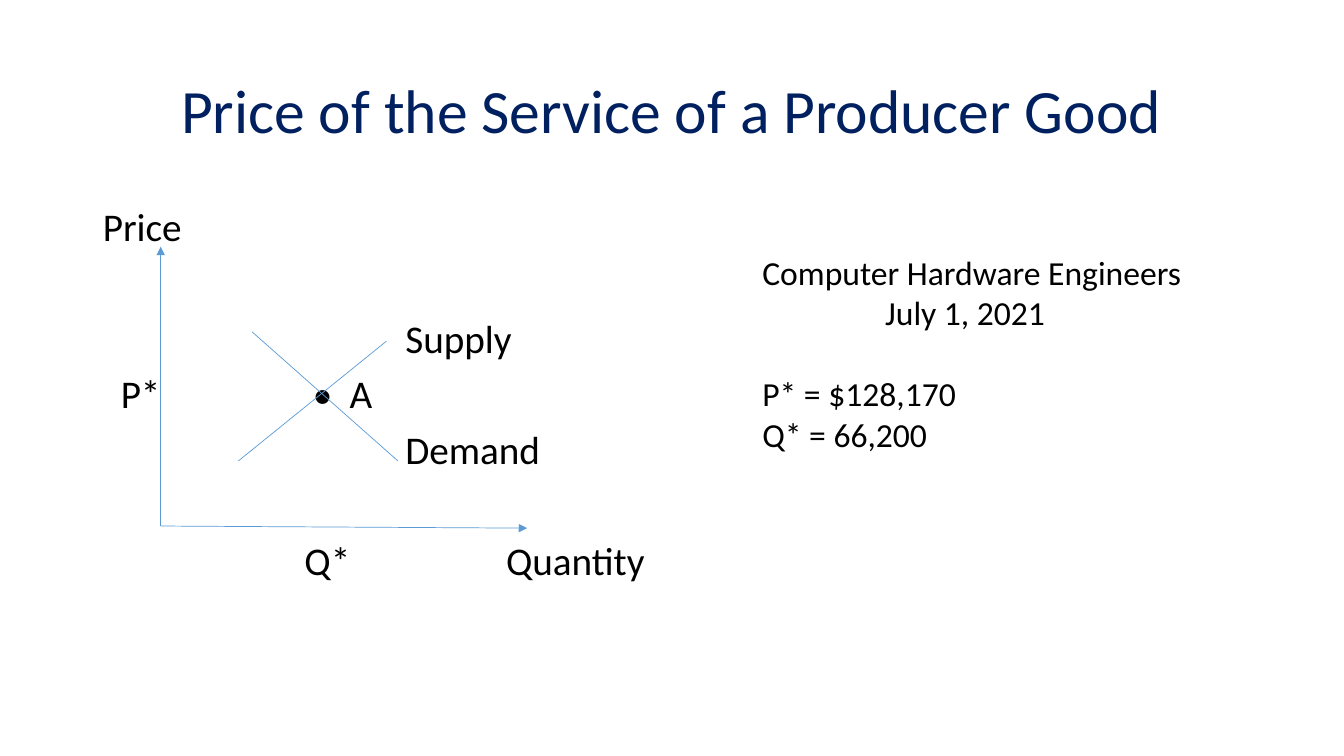
from pptx import Presentation
from pptx.dml.color import RGBColor
from pptx.enum.shapes import MSO_CONNECTOR as Connector
from pptx.enum.text import MSO_ANCHOR as Anchor, PP_ALIGN as Align
from pptx.oxml.ns import qn
from pptx.util import Pt
from lxml.etree import SubElement

PX = 9525  # EMU in one px, 96 px to the inch
COLORS = {"title": "002060", "text": "000000", "line": "5B9BD5"}
FONT = "Calibri"


class MarketSlide:
    def __init__(self, deck):
        self.page = deck.slides.add_slide(deck.slide_layouts[5])

    def style(self, para, size, color):
        for span in para.runs:
            span.font.name = FONT
            span.font.size = Pt(size)
            span.font.color.rgb = RGBColor.from_string(COLORS[color])

    def title(self, text, left, top, width, height):
        box = self.page.shapes.title
        box.left, box.top = left * PX, top * PX
        box.width, box.height = width * PX, height * PX
        frame = box.text_frame
        frame.text = text
        frame.word_wrap = True
        frame.vertical_anchor = Anchor.MIDDLE
        para = frame.paragraphs[0]
        para.alignment = Align.CENTER
        para.line_spacing = 0.9
        self.style(para, 44, "title")

    def text(self, text, left, top, width, height, size):
        box = self.page.shapes.add_textbox(left * PX, top * PX, width * PX, height * PX)
        frame = box.text_frame
        frame.word_wrap = True
        frame.margin_left = frame.margin_right = 0
        frame.margin_top = frame.margin_bottom = 0
        frame.text = text
        for para in frame.paragraphs:
            para.alignment = Align.LEFT
            self.style(para, size, "text")
        return frame.paragraphs

    def line(self, start_x, start_y, end_x, end_y, arrow=False):
        line = self.page.shapes.add_connector(
            Connector.STRAIGHT, start_x * PX, start_y * PX, end_x * PX, end_y * PX)
        line.line.color.rgb = RGBColor.from_string(COLORS["line"])
        line.line.width = Pt(0.5)
        if arrow:
            SubElement(line.line._get_or_add_ln(), qn("a:tailEnd"), type="triangle")
        SubElement(line._element.spPr, qn("a:effectLst"))


def main():
    deck = Presentation()
    deck.slide_width, deck.slide_height = 1280 * PX, 720 * PX
    slide = MarketSlide(deck)
    slide.title("Price of the Service of a Producer Good", 88, 39, 1104, 139)

    # Graph labels: text, left edge, row
    first_row, row_step = 193, 53
    labels = [
        ("Price", 98, 0), ("Supply", 386, 2),
        ("P*", 115, 3), ("•", 298, 3), ("A", 333, 3),
        ("Demand", 386, 4), ("Q*", 290, 6), ("Quantity", 482, 6),
    ]
    for label, left, row in labels:
        slide.text(label, left, first_row + row * row_step, 20 + 24 * len(label), 46, 28)

    # Price and quantity axes
    origin_x, origin_y = 153, 501
    slide.line(origin_x, origin_y, origin_x, 235, arrow=True)
    slide.line(origin_x, origin_y, 502, 503, arrow=True)

    # Supply and demand curves
    slide.line(227, 439, 368, 325)
    slide.line(240, 316, 379, 439)

    # Equilibrium figures
    heading, date, price, quantity = slide.text(
        "Computer Hardware Engineers\nJuly 1, 2021\nP* = $128,170\nQ* = 66,200",
        726, 240, 422, 194, 24)
    date._p.get_or_add_pPr().set("marL", str(117 * PX))
    price.space_before = Pt(29)

    deck.save("out.pptx")


if __name__ == "__main__":
    main()
